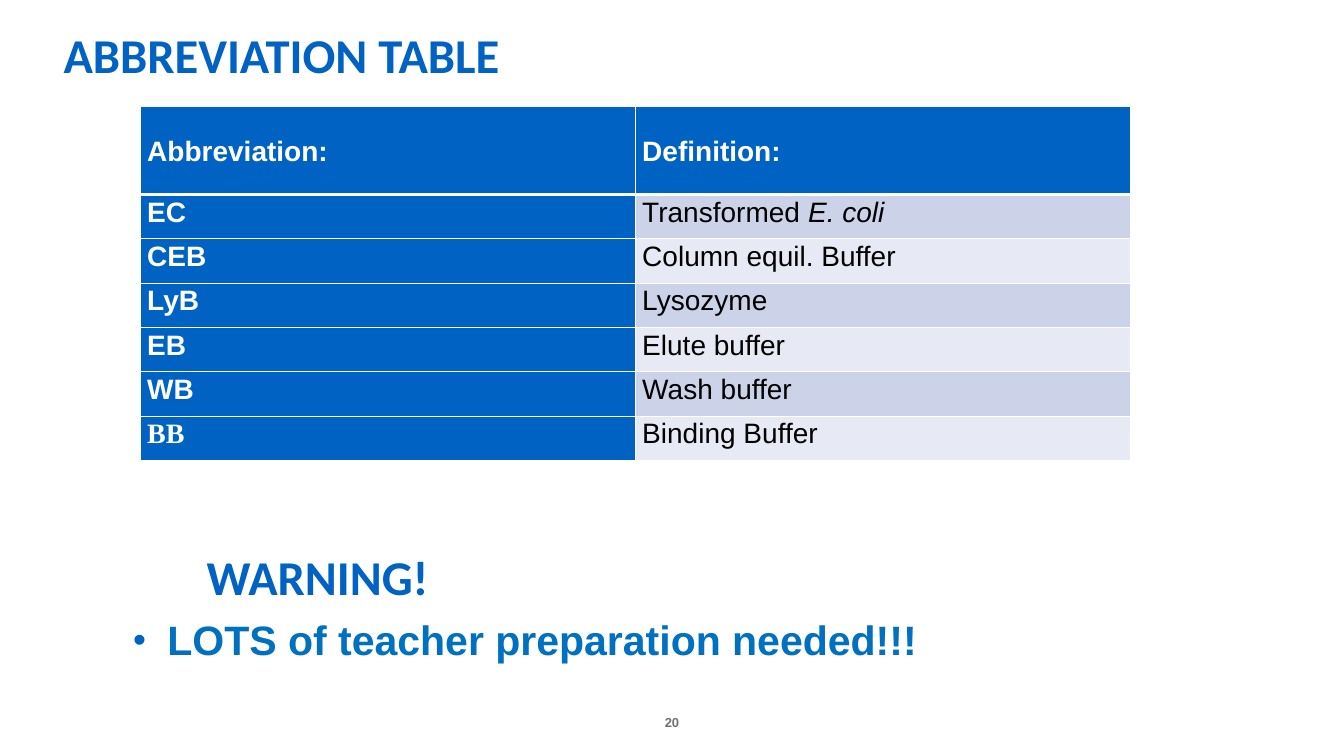
from lxml.etree import SubElement
from pptx import Presentation
from pptx.dml.color import RGBColor
from pptx.enum.text import MSO_ANCHOR, MSO_AUTO_SIZE, PP_ALIGN
from pptx.oxml.ns import qn
from pptx.util import Inches, Pt

BLUE, WHITE, BLACK = "0063C3", "FFFFFF", "000000"
BANDS = ("CCD3E9", "E7EAF5")
HEADING = {"name": "Calibri", "size": Pt(34.7), "bold": True}
BULLET = {"name": "Arial", "size": Pt(29.3), "bold": True}
NUMBER = {"name": "Arial", "size": Pt(9.3), "bold": True}
TERM = {"name": "Arial", "size": Pt(20), "bold": True}
MEANING = TERM | {"bold": False}
ABBREVIATIONS = [
    ("EC", ["Transformed ", "E. coli"]),
    ("CEB", ["Column equil. Buffer"]),
    ("LyB", ["Lysozyme"]),
    ("EB", ["Elute buffer"]),
    ("WB", ["Wash buffer"]),
    ("BB", ["Binding Buffer"]),
]


def colour(hex_value):
    """Turn a hex string into a colour."""
    return RGBColor.from_string(hex_value)


class SlideBuilder:
    """Hold the current slide and add styled elements to it."""

    def __init__(self, presentation):
        """Add a slide with a title and a body placeholder."""
        self.slide = presentation.slides.add_slide(presentation.slide_layouts[1])

    def add_words(self, paragraph, text, style, hex_value):
        """Add one run of formatted text."""
        run = paragraph.add_run()
        run.text = text
        for name, value in style.items():
            setattr(run.font, name, value)
        run.font.color.rgb = colour(hex_value)

    def fill_shape(self, shape, box, text, style, hex_value,
                   anchor=MSO_ANCHOR.BOTTOM, alignment=PP_ALIGN.LEFT):
        """Place a shape, fill it with one paragraph and return that paragraph."""
        for name, value in zip(("left", "top", "width", "height"), box):
            setattr(shape, name, Inches(value))
        frame = shape.text_frame
        settings = {"word_wrap": True, "auto_size": MSO_AUTO_SIZE.NONE, "vertical_anchor": anchor}
        for name, value in settings.items():
            setattr(frame, name, value)
        paragraph = frame.paragraphs[0]
        paragraph.alignment = alignment
        paragraph.space_before = Pt(0)
        self.add_words(paragraph, text, style, hex_value)
        return paragraph

    def title(self, box, text):
        """Fill the title placeholder."""
        self.fill_shape(self.slide.shapes.title, box, text, HEADING, BLUE)

    def text(self, box, text, style, hex_value, **layout):
        """Add a text box and return it."""
        shape = self.slide.shapes.add_textbox(0, 0, 0, 0)
        self.fill_shape(shape, box, text, style, hex_value, **layout)
        return shape

    def page_number(self, box, text):
        """Add the centred page number without insets."""
        frame = self.text(box, text, NUMBER, "716F73", alignment=PP_ALIGN.CENTER).text_frame
        for side in ("left", "top", "right", "bottom"):
            setattr(frame, f"margin_{side}", 0)

    def bullet(self, box, text):
        """Fill the body placeholder with one bulleted line."""
        paragraph = self.fill_shape(self.slide.placeholders[1], box, text, BULLET, "0070C0",
                                    anchor=MSO_ANCHOR.TOP)
        properties = paragraph._p.get_or_add_pPr()
        properties.set("marL", str(Inches(0.34)))
        properties.set("indent", str(-Inches(0.34)))
        SubElement(SubElement(properties, qn("a:buClr")), qn("a:srgbClr"), val=BLUE)
        SubElement(properties, qn("a:buSzPct"), val="90000")
        SubElement(properties, qn("a:buFont"), typeface="Arial")
        SubElement(properties, qn("a:buChar"), char="•")

    def cell(self, cell, texts, style, hex_value, fill, anchor=MSO_ANCHOR.TOP, top=1, bottom=1):
        """Format one cell; a second text is set in italics."""
        settings = {"margin_left": Inches(0.07), "margin_right": Inches(0.07),
                    "margin_top": 0, "margin_bottom": 0, "vertical_anchor": anchor}
        for name, value in settings.items():
            setattr(cell, name, value)
        properties = cell._tc.get_or_add_tcPr()
        for side, width in (("L", 1), ("R", 1), ("T", top), ("B", bottom)):
            line = SubElement(properties, qn(f"a:ln{side}"), w=str(Pt(width)))
            SubElement(SubElement(line, qn("a:solidFill")), qn("a:srgbClr"), val=WHITE)
        cell.fill.solid()
        cell.fill.fore_color.rgb = colour(fill)
        paragraph = cell.text_frame.paragraphs[0]
        paragraph.line_spacing = 1.07
        for index, text in enumerate(texts):
            self.add_words(paragraph, text, style | {"italic": index > 0}, hex_value)

    def table(self, box, headers, rows, header_height, row_height):
        """Add the table of abbreviations."""
        shape = self.slide.shapes.add_table(len(rows) + 1, len(headers), *map(Inches, box))
        table = shape.table
        for index, row in enumerate(table.rows):
            row.height = Inches(row_height if index else header_height)
        for column, header in enumerate(headers):
            self.cell(table.cell(0, column), [header], TERM, WHITE, BLUE,
                      anchor=MSO_ANCHOR.MIDDLE, bottom=3)
        for index, (term, meaning) in enumerate(rows):
            top = 1 if index else 3
            font = "Times New Roman" if term == "BB" else "Arial"
            self.cell(table.cell(index + 1, 0), [term], TERM | {"name": font}, WHITE, BLUE, top=top)
            self.cell(table.cell(index + 1, 1), meaning, MEANING, BLACK, BANDS[index % 2], top=top)


def main():
    """Build and save the slide."""
    presentation = Presentation()
    presentation.slide_width = Inches(13.33)
    presentation.slide_height = Inches(7.5)
    builder = SlideBuilder(presentation)
    builder.page_number((6.06, 6.84, 1.21, 0.4), "20")
    builder.table((1.39, 1.06, 9.82, 3.51), ("Abbreviation:", "Definition:"),
                  ABBREVIATIONS, 0.87, 0.44)
    builder.title((0.53, 0.2, 12.27, 0.68), "ABBREVIATION TABLE")
    builder.text((1.95, 4.39, 7.45, 1.66), "WARNING!", HEADING, BLUE)
    builder.bullet((1.22, 6.05, 8.92, 1.04), "LOTS of teacher preparation needed!!!")
    presentation.save("out.pptx")


if __name__ == "__main__":
    main()
